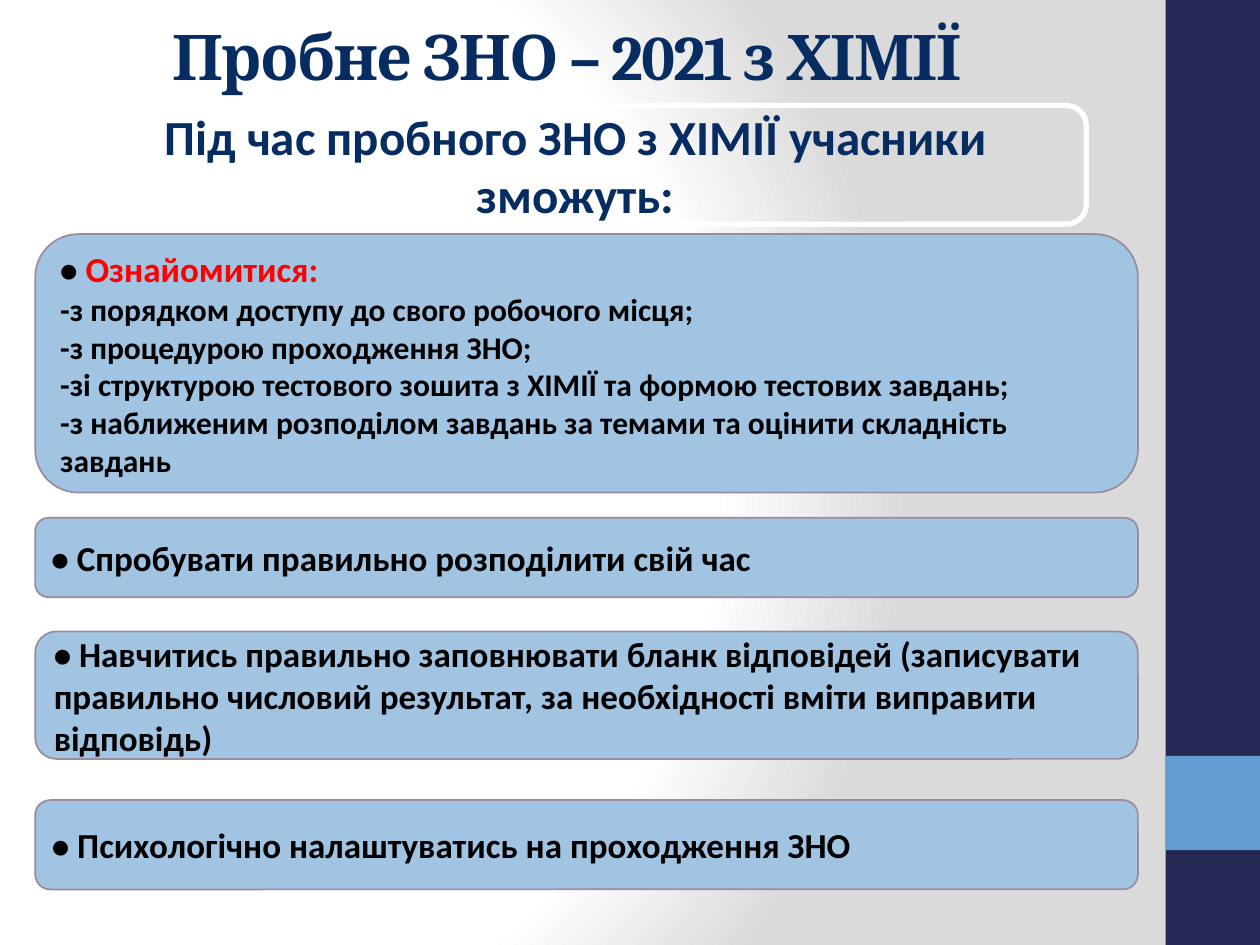
from pptx import Presentation
from pptx.dml.color import RGBColor
from pptx.enum.shapes import MSO_SHAPE as Geo
from pptx.enum.text import MSO_ANCHOR as Anchor, PP_ALIGN as Align
from pptx.oxml import parse_xml
from pptx.oxml.ns import nsdecls
from pptx.util import Cm, Pt

WIDTH, HEIGHT = 25.4, 19.05
NAVY, RED, BLACK, WHITE = "072C62", "FF0000", "000000", "FFFFFF"
HEAD = dict(name="Cambria", size=Pt(36), bold=True)
LEAD = dict(name="Calibri", size=Pt(28), bold=True)
ITEM = dict(LEAD, size=Pt(20))
SUB = dict(LEAD, size=Pt(18))

# top, height, paragraphs; each paragraph is a list of (text, format, colour)
CARDS = [
    (4.72, 5.21, [
        [("• ", ITEM, BLACK), ("Ознайомитися:", ITEM, RED)],
        [("-з порядком доступу до свого робочого місця;", SUB, BLACK)],
        [("-з процедурою проходження ЗНО;", SUB, BLACK)],
        [("-зі структурою тестового зошита з ХІМІЇ та формою тестових завдань;",
          SUB, BLACK)],
        [("-з наближеним розподілом завдань за темами та оцінити складність "
          "завдань", SUB, BLACK)],
    ]),
    (10.44, 1.6, [[("• Спробувати правильно розподілити свій час", ITEM, BLACK)]]),
    (12.73, 2.57, [[("• Навчитись правильно заповнювати бланк відповідей "
                     "(записувати правильно числовий результат, за необхідності "
                     "вміти виправити відповідь)", ITEM, BLACK)]]),
    (16.13, 1.8, [[("• Психологічно налаштуватись на проходження ЗНО",
                    ITEM, BLACK)]]),
]


def paint(target, color):
    """Give a fill a solid colour, or none."""
    if color is None:
        target.background()
    else:
        target.solid()
        target.fore_color.rgb = RGBColor.from_string(color)


def write(shape, paras, align):
    """Fill a shape with paragraphs and return the runs."""
    frame = shape.text_frame
    frame.word_wrap = True
    frame.vertical_anchor = Anchor.MIDDLE
    runs = []
    for i, parts in enumerate(paras):
        para = frame.add_paragraph() if i else frame.paragraphs[0]
        para.alignment = align
        for text, style, color in parts:
            run = para.add_run()
            run.text = text
            for key, value in style.items():
                setattr(run.font, key, value)
            paint(run.font.fill, color)
            runs.append(run)
    return runs


def panel(slide, geo, box, fill=None, line=None, weight=1):
    shape = slide.shapes.add_shape(geo, *map(Cm, box))
    shape.shadow.inherit = False
    paint(shape.fill, fill)
    paint(shape.line.fill, line)
    if line:
        shape.line.width = Pt(weight)
    return shape


def backdrop(slide):
    stops = "".join(
        f'<a:gs pos="{pos * 1000}"><a:srgbClr val="{color}"/></a:gs>'
        for pos, color in [(0, WHITE), (75, WHITE), (100, "DADADA")])
    slide.element.cSld.insert(0, parse_xml(
        f'<p:bg {nsdecls("p", "a")}><p:bgPr><a:gradFill rotWithShape="1">'
        f'<a:gsLst>{stops}</a:gsLst><a:path path="circle">'
        '<a:fillToRect l="20000" t="50000" r="100000" b="50000"/></a:path>'
        '</a:gradFill><a:effectLst/></p:bgPr></p:bg>'))


def stripe(slide, left, top, width, height):
    """Draw the side band with its light square."""
    panel(slide, Geo.RECTANGLE, (left, top, width, height), "242852")
    panel(slide, Geo.RECTANGLE, (left, top + 0.8 * height, width, width), "629DD1")


def heading(slide, *box):
    title = slide.shapes.title
    for key, value in zip(("left", "top", "width", "height"), box):
        setattr(title, key, Cm(value))
    run, = write(title, [[("Пробне ЗНО – 2021 з ХІМІЇ", HEAD, NAVY)]], Align.CENTER)
    run.font._element.set("spc", "-100")


def intro(slide, *box):
    shape = panel(slide, Geo.ROUNDED_RECTANGLE, box, line=WHITE, weight=3)
    text = "Під час пробного ЗНО з ХІМІЇ учасники зможуть:"
    run, = write(shape, [[(text, LEAD, NAVY)]], Align.CENTER)
    run.font._element.insert(0, parse_xml(
        f'<a:ln {nsdecls("a")} w="{Pt(1.45)}"><a:solidFill>'
        f'<a:srgbClr val="{WHITE}"/></a:solidFill></a:ln>'))


def cards(slide, left, width):
    for top, height, paras in CARDS:
        shape = panel(slide, Geo.ROUNDED_RECTANGLE, (left, top, width, height),
                      "A1C4E3", "9A8C9D")
        write(shape, paras, Align.LEFT)


def main():
    deck = Presentation()
    deck.slide_width, deck.slide_height = Cm(WIDTH), Cm(HEIGHT)
    slide = deck.slides.add_slide(deck.slide_layouts[5])
    backdrop(slide)
    stripe(slide, 23.5, 0, 1.9, HEIGHT)
    heading(slide, 0, 0.15, 22.86, 1.93)
    intro(slide, 1.3, 2.13, 20.6, 2.39)
    cards(slide, 0.71, 22.23)
    deck.save("out.pptx")


if __name__ == "__main__":
    main()
